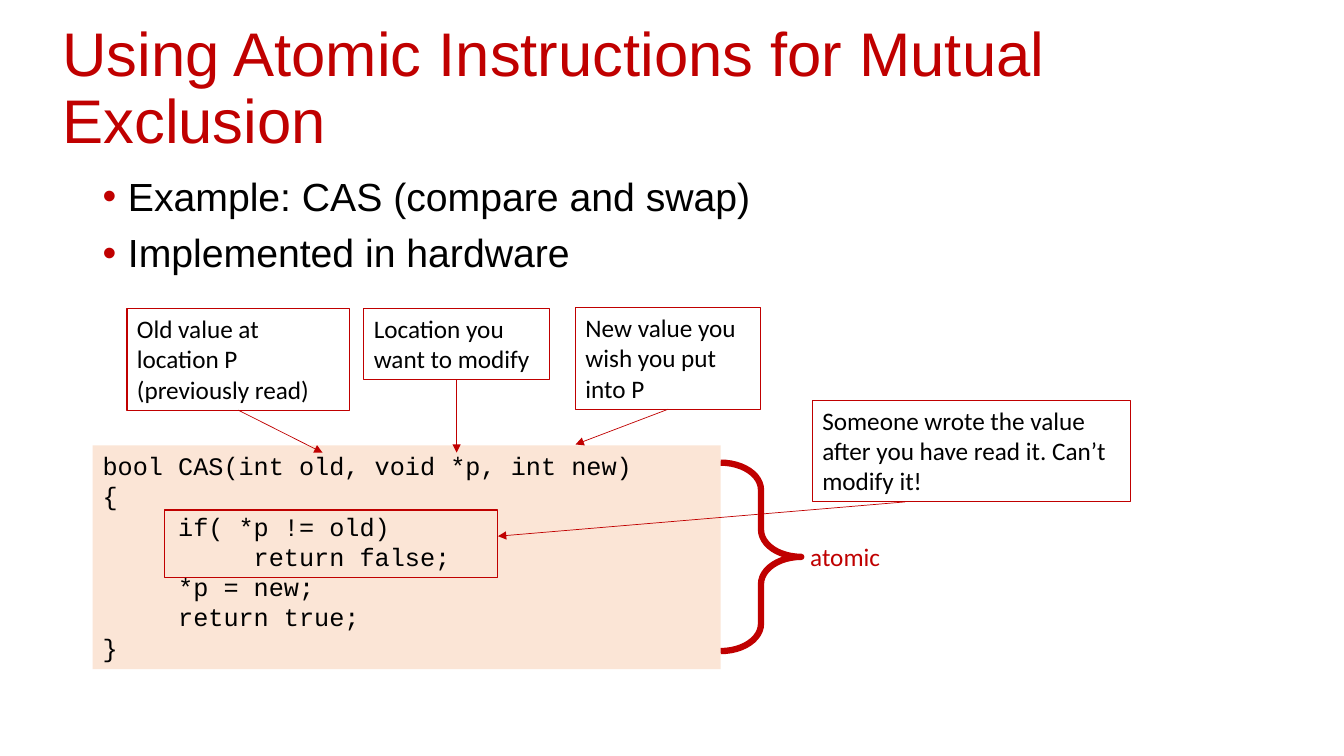
from lxml import etree
from pptx import Presentation
from pptx import util as u
from pptx.dml.color import RGBColor
from pptx.enum import shapes, text
from pptx.oxml import ns

Pt = u.Pt
RED = RGBColor(0xC0, 0x00, 0x00)
BLACK = RGBColor(0x00, 0x00, 0x00)
PEACH = RGBColor(0xFB, 0xE5, 0xD6)


def write_text(shape, content, font_name, size, color):
    frame = shape.text_frame
    frame.text = content
    frame.word_wrap = True
    for paragraph in frame.paragraphs:
        paragraph.alignment = text.PP_ALIGN.LEFT
        paragraph.font.name = font_name
        paragraph.font.size = Pt(size)
        paragraph.font.color.rgb = color


def place(shape, left, top, width, height):
    shape.left, shape.top = Pt(left), Pt(top)
    shape.width, shape.height = Pt(width), Pt(height)


presentation = Presentation()
presentation.slide_width, presentation.slide_height = Pt(960), Pt(540)
slide = presentation.slides.add_slide(presentation.slide_layouts[1])

# Title and bullets
title, body = slide.placeholders
place(title, 37.4, 12.2, 856.8, 104.4)
write_text(title, "Using Atomic Instructions for Mutual Exclusion", "Arial", 44, RED)
title.text_frame.vertical_anchor = text.MSO_ANCHOR.MIDDLE
title.text_frame.auto_size = text.MSO_AUTO_SIZE.NONE
title.text_frame.paragraphs[0].line_spacing = 0.9

place(body, 66.2, 123.1, 828, 83.5)
write_text(body, "Example: CAS (compare and swap)\nImplemented in hardware", "Arial", 28, BLACK)
body.text_frame.auto_size = text.MSO_AUTO_SIZE.NONE
for paragraph in body.text_frame.paragraphs:
    paragraph.line_spacing = 0.9
    paragraph.space_before = Pt(10)
    properties = paragraph._p.get_or_add_pPr()
    properties.set("marL", str(Pt(18)))
    properties.set("indent", str(-Pt(18)))
    bullet_color = etree.Element(ns.qn("a:buClr"))
    etree.SubElement(bullet_color, ns.qn("a:srgbClr"), val=str(RED))
    bullet_font = etree.Element(ns.qn("a:buFont"), typeface="Arial")
    bullet = etree.Element(ns.qn("a:buChar"), char="•")
    font_defaults = properties.find(ns.qn("a:defRPr"))
    for element in (bullet_color, bullet_font, bullet):
        font_defaults.addprevious(element)

# Code block, indented by whole levels
code_lines = [
    (0, "bool CAS(int old, void *p, int new)"),
    (0, "{"),
    (1, "if( *p != old)"),
    (2, "return false;"),
    (1, "*p = new;"),
    (1, "return true;"),
    (0, "}"),
]
code = slide.shapes.add_textbox(Pt(66.2), Pt(318.2), Pt(448.6), Pt(159.8))
code.fill.solid()
code.fill.fore_color.rgb = PEACH
write_text(code, "\n".join(line for _, line in code_lines), "Courier New", 18, BLACK)
for paragraph, (level, _) in zip(code.text_frame.paragraphs, code_lines):
    paragraph._p.get_or_add_pPr().set("marL", str(Pt(54 * level)))

# Brace with its label, and the frame around the check
brace = slide.shapes.add_shape(
    shapes.MSO_SHAPE.RIGHT_BRACE, Pt(514.8), Pt(330.5), Pt(57.6), Pt(134.6))
brace.adjustments[0] = 0.338
check = slide.shapes.add_shape(
    shapes.MSO_SHAPE.RECTANGLE, Pt(117.4), Pt(364.3), Pt(238.3), Pt(48.2))
for outline, weight in ((brace, 4.5), (check, 0.75)):
    outline.shadow.inherit = False
    outline.fill.background()
    outline.line.color.rgb = RED
    outline.line.width = Pt(weight)

label = slide.shapes.add_textbox(Pt(571.7), Pt(383), Pt(74.2), Pt(28.8))
write_text(label, "atomic", "Calibri", 18, RED)

# Callouts: text, box, arrow start (None: bottom middle), arrow tip
callouts = [
    ("Old value at location P (previously read)",
     (90.7, 220.3, 159.1, 72.7), None, (230.4, 323.3)),
    ("Location you want to modify",
     (259.9, 220.3, 132.5, 51.1), None, (326.15, 323.3)),
    ("New value you wish you put into P",
     (411.1, 219.6, 132.5, 72.7), None, (411.1, 317.5)),
    ("Someone wrote the value after you have read it. Can’t modify it!",
     (580.3, 285.8, 227.5, 72.7), (646.6, 358.5), (355.7, 383)),
]
for content, box, start, tip in callouts:
    callout = slide.shapes.add_textbox(*map(Pt, box))
    callout.line.color.rgb = RED
    callout.line.width = Pt(0.75)
    write_text(callout, content, "Calibri", 18, BLACK)

    arrow = slide.shapes.add_connector(
        shapes.MSO_CONNECTOR.STRAIGHT, *map(Pt, (start or box[:2]) + tip))
    if start is None:
        arrow.begin_connect(callout, 2)
    arrow.line.color.rgb = RED
    arrow.line.width = Pt(0.5)
    etree.SubElement(arrow.line._get_or_add_ln(), ns.qn("a:tailEnd"), type="triangle")
    etree.SubElement(arrow._element.spPr, ns.qn("a:effectLst"))

presentation.save("out.pptx")
